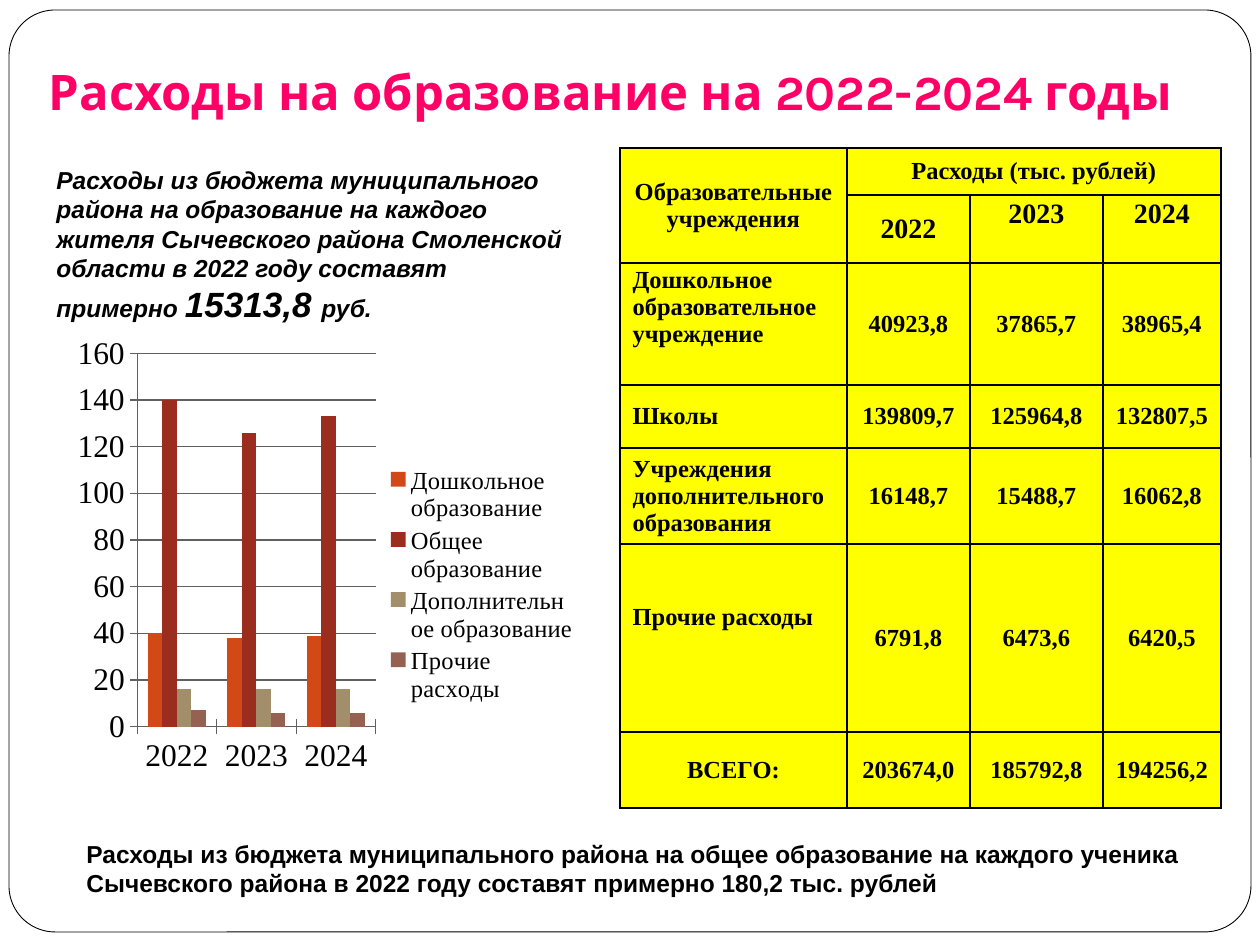
from lxml import etree
from pptx import Presentation
from pptx.chart.data import CategoryChartData
from pptx.dml.color import RGBColor
from pptx.enum.chart import XL_CHART_TYPE, XL_LEGEND_POSITION, XL_TICK_MARK
from pptx.enum.shapes import MSO_SHAPE
from pptx.enum.text import MSO_ANCHOR, PP_ALIGN
from pptx.oxml import parse_xml
from pptx.oxml.ns import nsdecls, qn
from pptx.util import Pt

PX = 914400 // 126
BLACK = RGBColor(0x00, 0x00, 0x00)
WHITE = RGBColor(0xFF, 0xFF, 0xFF)
PINK = RGBColor(0xFF, 0x00, 0x66)
YELLOW = RGBColor(0xFF, 0xFF, 0x00)
GREY = RGBColor(0x60, 0x60, 0x60)
SERIF = "Times New Roman"

TITLE = "Расходы на образование на 2022-2024 годы"
PER_RESIDENT = [
    ("Расходы из бюджета муниципального района на образование на каждого жителя "
     "Сычевского района Смоленской области в 2022 году составят примерно ", 14),
    ("15313,8 ", 20),
    ("руб.", 14),
]
PER_PUPIL = ("Расходы из бюджета муниципального района на общее образование на каждого "
             "ученика Сычевского района в 2022 году составят примерно 180,2 тыс. рублей")

YEARS = ["2022", "2023", "2024"]
ROWS = [
    ["Образовательные учреждения", "Расходы (тыс. рублей)", "", ""],
    ["", *YEARS],
    ["Дошкольное образовательное учреждение", "40923,8", "37865,7", "38965,4"],
    ["Школы", "139809,7", "125964,8", "132807,5"],
    ["Учреждения\nдополнительного\nобразования", "16148,7", "15488,7", "16062,8"],
    ["Прочие расходы", "6791,8", "6473,6", "6420,5"],
    ["ВСЕГО:", "203674,0", "185792,8", "194256,2"],
]
COL_WIDTHS = [227, 123, 133, 118]
ROW_HEIGHTS = [47, 68, 122, 63, 93, 188, 76]
YEAR_ROW, OTHER_ROW = 1, 5
TOP_CELLS = {(1, 2), (1, 3), (2, 0), (5, 0)}
ALIGN = {(2, 0): PP_ALIGN.JUSTIFY, (3, 0): PP_ALIGN.JUSTIFY,
         (4, 0): PP_ALIGN.JUSTIFY, (5, 0): PP_ALIGN.LEFT}

SERIES = [
    ("Дошкольное образование", (40, 38, 39), RGBColor(0xD3, 0x48, 0x17)),
    ("Общее образование", (140, 126, 133), RGBColor(0x9B, 0x2D, 0x1F)),
    ("Дополнительное образование", (16, 16, 16), RGBColor(0xA2, 0x8E, 0x6A)),
    ("Прочие расходы", (7, 6, 6), RGBColor(0x95, 0x62, 0x51)),
]
PLOT = {"x": 0.178, "y": 0.055, "w": 0.432, "h": 0.718}


def px(*values):
    return [v * PX for v in values]


def style_font(font, color=BLACK, **values):
    for name, value in values.items():
        setattr(font, name, value)
    font.color.rgb = color


def add_text(slide, box, runs, anchor=MSO_ANCHOR.MIDDLE, align=PP_ALIGN.LEFT,
             color=BLACK, bottom=6, **font):
    tf = slide.shapes.add_textbox(*px(*box)).text_frame
    tf.word_wrap = True
    tf.vertical_anchor = anchor
    tf.margin_bottom = bottom * PX
    p = tf.paragraphs[0]
    p.alignment = align
    for text, size in runs:
        r = p.add_run()
        r.text = text
        style_font(r.font, color, size=Pt(size), bold=True, **font)


def add_borders(cell):
    tc_pr = cell._tc.get_or_add_tcPr()
    for i, side in enumerate(("lnL", "lnR", "lnT", "lnB")):
        tc_pr.insert(i, parse_xml(
            f'<a:{side} {nsdecls("a")} w="12700"><a:solidFill>'
            f'<a:srgbClr val="{BLACK}"/></a:solidFill></a:{side}>'))


def add_spending_table(slide):
    box = px(620, 148, sum(COL_WIDTHS), sum(ROW_HEIGHTS))
    table = slide.shapes.add_table(len(ROWS), len(COL_WIDTHS), *box).table
    for col, width in zip(table.columns, COL_WIDTHS):
        col.width = width * PX
    for row, height in zip(table.rows, ROW_HEIGHTS):
        row.height = height * PX
    for i, row in enumerate(ROWS):
        for j, text in enumerate(row):
            cell = table.cell(i, j)
            cell.fill.solid()
            cell.fill.fore_color.rgb = YELLOW
            add_borders(cell)
            cell.margin_top = cell.margin_bottom = 4 * PX
            top = (i, j) in TOP_CELLS
            cell.vertical_anchor = MSO_ANCHOR.TOP if top else MSO_ANCHOR.MIDDLE
            cell.text = text
            size = 16 if i == YEAR_ROW else 14
            for p in cell.text_frame.paragraphs:
                p.alignment = ALIGN.get((i, j), PP_ALIGN.CENTER)
                style_font(p.font, size=Pt(size), name=SERIF, bold=True)
                for r in p.runs:
                    style_font(r.font, size=Pt(size), name=SERIF, bold=True)
    table.cell(OTHER_ROW, 0).margin_top = 60 * PX
    table.cell(0, 0).merge(table.cell(1, 0))
    table.cell(0, 1).merge(table.cell(0, 3))


def set_plot_layout(chart):
    """Fix the inner plot area as fractions of the chart."""
    area = chart._chartSpace.chart.plotArea
    for old in area.findall(qn("c:layout")):
        area.remove(old)
    layout = etree.Element(qn("c:layout"))
    manual = etree.SubElement(layout, qn("c:manualLayout"))
    values = {"layoutTarget": "inner", "xMode": "edge", "yMode": "edge", **PLOT}
    for name, value in values.items():
        etree.SubElement(manual, qn(f"c:{name}")).set("val", str(value))
    area.insert(0, layout)


def add_spending_chart(slide):
    data = CategoryChartData()
    data.categories = YEARS
    for name, values, _ in SERIES:
        data.add_series(name, values)
    chart = slide.shapes.add_chart(
        XL_CHART_TYPE.COLUMN_CLUSTERED, *px(39, 325, 552, 520), data).chart
    style_font(chart.font, size=Pt(18), name=SERIF)
    chart.has_title = False
    chart.has_legend = True
    chart.legend.position = XL_LEGEND_POSITION.RIGHT
    chart.legend.include_in_layout = False
    style_font(chart.legend.font, size=Pt(14), name=SERIF)
    plot = chart.plots[0]
    plot.vary_by_categories = False
    plot.gap_width = 150
    for series, (_, _, color) in zip(plot.series, SERIES):
        series.format.fill.solid()
        series.format.fill.fore_color.rgb = color
    value_axis = chart.value_axis
    value_axis.minimum_scale, value_axis.maximum_scale = 0, 160
    value_axis.major_unit = 20
    value_axis.has_major_gridlines = True
    for axis in (chart.category_axis, value_axis):
        axis.major_tick_mark = XL_TICK_MARK.CROSS
    for part in (chart.category_axis, value_axis, value_axis.major_gridlines):
        part.format.line.color.rgb = GREY
        part.format.line.width = Pt(0.75)
    set_plot_layout(chart)


def add_frame(slide):
    sp = slide.shapes.add_shape(MSO_SHAPE.ROUNDED_RECTANGLE, *px(9, 10, 1242, 922))
    sp.adjustments[0] = 0.05
    sp.shadow.inherit = False
    sp.fill.solid()
    sp.fill.fore_color.rgb = WHITE
    sp.line.color.rgb = BLACK
    sp.line.width = Pt(0.5)


def main():
    prs = Presentation()
    prs.slide_width, prs.slide_height = px(1260, 945)
    slide = prs.slides.add_slide(prs.slide_layouts[6])
    add_frame(slide)
    add_text(slide, (0, 35, 1221, 97), [(TITLE, 28)], MSO_ANCHOR.BOTTOM,
             PP_ALIGN.CENTER, PINK, bottom=12, name="Karla")
    add_spending_table(slide)
    add_text(slide, (44, 155, 536, 179), PER_RESIDENT, name="Arial", italic=True)
    add_text(slide, (74, 839, 1134, 58), [(PER_PUPIL, 14)], name="Arial")
    add_spending_chart(slide)
    prs.save("out.pptx")


if __name__ == "__main__":
    main()
